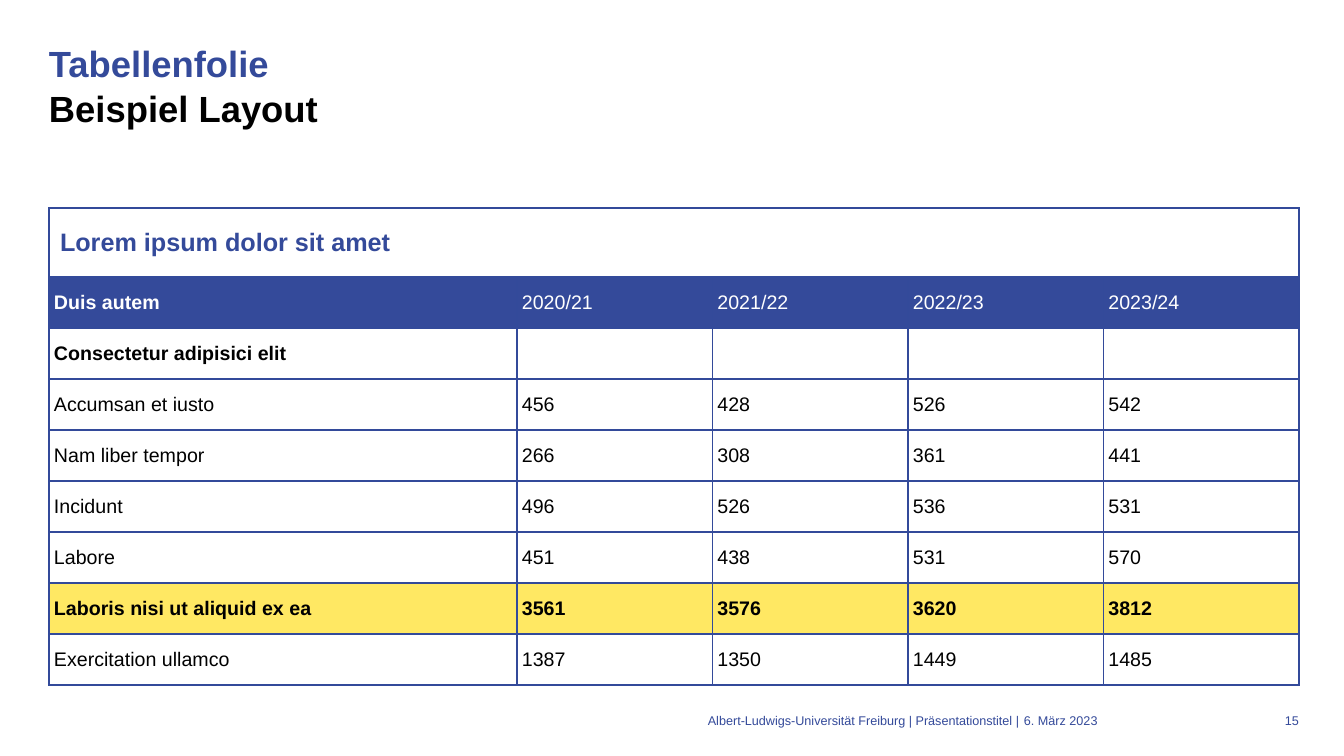
from lxml import etree
from pptx import Presentation
from pptx import util as u
from pptx.dml.color import RGBColor
from pptx.enum import text
from pptx.oxml.ns import qn

BLUE = RGBColor(0x34, 0x4A, 0x9A)
YELLOW = RGBColor(0xFF, 0xE8, 0x63)
WHITE = RGBColor(0xFF, 0xFF, 0xFF)
BLACK = RGBColor(0, 0, 0)
BORDER = "334A9A"
FONT = "Arial"

TITLE = [("Tabellenfolie", BLUE), ("Beispiel Layout", BLACK)]
CAPTION = "Lorem ipsum dolor sit amet"
ROWS = [
    ("Duis autem", "2020/21", "2021/22", "2022/23", "2023/24"),
    ("Consectetur adipisici elit", "", "", "", ""),
    ("Accumsan et iusto", "456", "428", "526", "542"),
    ("Nam liber tempor", "266", "308", "361", "441"),
    ("Incidunt", "496", "526", "536", "531"),
    ("Labore", "451", "438", "531", "570"),
    ("Laboris nisi ut aliquid ex ea", "3561", "3576", "3620", "3812"),
    ("Exercitation ullamco", "1387", "1350", "1449", "1485"),
]
HEADER = "Duis autem"
SECTION = "Consectetur adipisici elit"
TOTAL = "Laboris nisi ut aliquid ex ea"

LEFT, RIGHT = text.PP_ALIGN.LEFT, text.PP_ALIGN.RIGHT
# wording, left, width, left inset, alignment
FOOTER = [
    ("Albert-Ludwigs-Universität Freiburg | Präsentationstitel |", 329, 690, 0, RIGHT),
    ("6. März 2023", 1020, 158, 4, LEFT),
    ("15", 1259, 40, 0, RIGHT),
]
FOOTER_TOP, FOOTER_HEIGHT = 713, 20

MARGIN, CONTENT_WIDTH = 49, 1250
TITLE_TOP, TITLE_HEIGHT = 40, 146
TABLE_TOP, CAPTION_HEIGHT, ROW_HEIGHT = 208, 69, 51
LABEL_WIDTH = 468
YEARS = len(ROWS[0]) - 1
YEAR_WIDTH = (CONTENT_WIDTH - LABEL_WIDTH) / YEARS


def px(length):
    return u.Emu(round(length * 914400 / 100.8))


def set_font(font, size, color, bold=False):
    font.name, font.size, font.bold = FONT, u.Pt(size), bold
    font.color.rgb = color


def add_box(page, left, top, width, height, inset=0):
    """Add an empty text box and return its first paragraph."""
    frame = page.shapes.add_textbox(px(left), px(top), px(width), px(height)).text_frame
    frame.word_wrap = True
    frame.margin_left = px(inset)
    frame.margin_top = frame.margin_right = frame.margin_bottom = 0
    return frame.paragraphs[0]


def add_borders(cell):
    properties = cell._tc.get_or_add_tcPr()
    for side in ("lnL", "lnR", "lnT", "lnB"):
        line = etree.SubElement(properties, qn(f"a:{side}"), w=str(u.Pt(1)))
        fill = etree.SubElement(line, qn("a:solidFill"))
        etree.SubElement(fill, qn("a:srgbClr"), val=BORDER)


def fill_cell(cell, wording, size, color, bold, fill=None, inset=5):
    cell.margin_left = cell.margin_right = px(inset)
    cell.margin_top = cell.margin_bottom = px(5)
    cell.vertical_anchor = text.MSO_ANCHOR.MIDDLE
    if fill is None:
        cell.fill.background()
    else:
        cell.fill.solid()
        cell.fill.fore_color.rgb = fill
    cell.text = wording
    set_font(cell.text_frame.paragraphs[0].font, size, color, bold)


def add_title(page):
    para = add_box(page, MARGIN, TITLE_TOP, CONTENT_WIDTH, TITLE_HEIGHT)
    para.line_spacing = u.Pt(32)
    for number, (wording, color) in enumerate(TITLE):
        if number:
            para.add_line_break()
        span = para.add_run()
        span.text = wording
        set_font(span.font, 26, color, True)


def add_figures(page):
    heights = [CAPTION_HEIGHT] + [ROW_HEIGHT] * len(ROWS)
    widths = [LABEL_WIDTH] + [YEAR_WIDTH] * YEARS
    table = page.shapes.add_table(
        len(heights), len(widths), px(MARGIN), px(TABLE_TOP),
        px(CONTENT_WIDTH), px(sum(heights))).table
    table.first_row = table.horz_banding = False
    for row, height in zip(table.rows, heights):
        row.height = px(height)
    for column, width in zip(table.columns, widths):
        column.width = px(width)
    for cell in table.iter_cells():
        add_borders(cell)

    table.cell(0, 0).merge(table.cell(0, YEARS))
    fill_cell(table.cell(0, 0), CAPTION, 18, BLUE, True, inset=11)
    fills = {HEADER: BLUE, TOTAL: YELLOW}
    for r, row in enumerate(ROWS, 1):
        label = row[0]
        color = WHITE if label == HEADER else BLACK
        for c, wording in enumerate(row):
            bold = label in (SECTION, TOTAL) or wording == HEADER
            fill_cell(table.cell(r, c), wording, 14, color, bold, fills.get(label))


def add_footer(page):
    for wording, left, width, inset, alignment in FOOTER:
        para = add_box(page, left, FOOTER_TOP, width, FOOTER_HEIGHT, inset)
        para.text = wording
        para.alignment = alignment
        set_font(para.font, 9, BLUE)


def main():
    deck = Presentation()
    deck.slide_width, deck.slide_height = px(1344), px(756)
    page = deck.slides.add_slide(deck.slide_layouts[6])
    add_title(page)
    add_figures(page)
    add_footer(page)
    deck.save("out.pptx")


if __name__ == "__main__":
    main()
